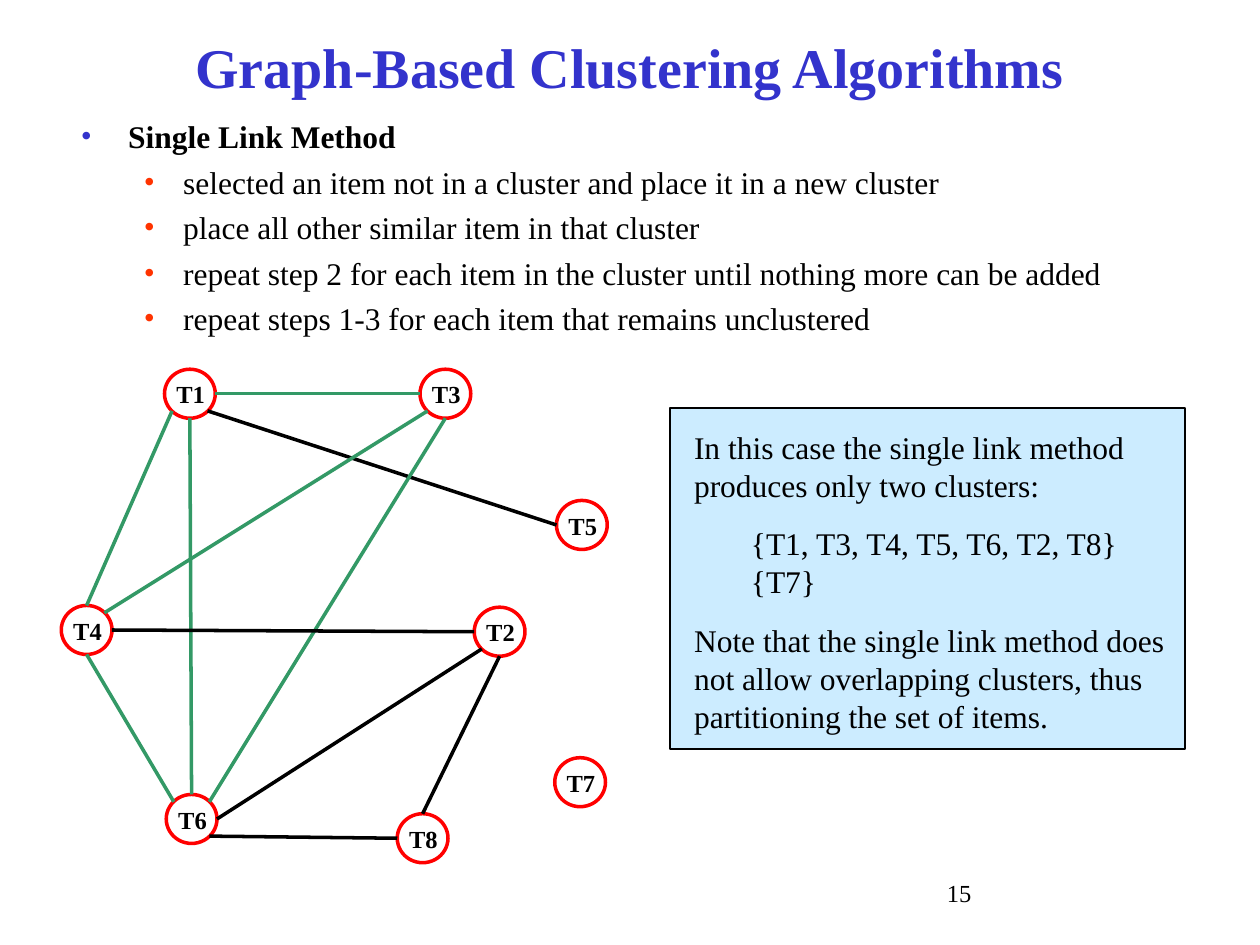
from lxml import etree
from pptx import Presentation
from pptx.dml.color import RGBColor
from pptx.enum import shapes, text
from pptx.oxml import ns
from pptx.util import Pt

COLORS = {
    "title": "3333CC", "text": "000000", "sub_bullet": "FF3300",
    "callout": "CCECFF", "node": "FF0000", "similar": "339966", "link": "000000",
}
FONT = "Times New Roman"

STEPS = [
    "selected an item not in a cluster and place it in a new cluster",
    "place all other similar item in that cluster",
    "repeat step 2 for each item in the cluster until nothing more can be added",
    "repeat steps 1-3 for each item that remains unclustered",
]
# Paragraph text, left indent, space before
FINDINGS = [
    ("In this case the single link method produces only two clusters:", 0, 0),
    ("{T1, T3, T4, T5, T6, T2, T8}", 32.5, 12),
    ("{T7}", 32.5, 0),
    ("Note that the single link method does not allow overlapping clusters, "
     "thus partitioning the set of items.", 0, 12),
]

NODE_W, NODE_H = 29, 28
NODES = {
    "T1": (59, 0), "T8": (192, 254), "T3": (205, 0), "T2": (236, 136),
    "T6": (60, 243), "T7": (282, 222), "T4": (0, 135), "T5": (283, 75),
}
# Points on a node's rim, as fractions of its width and height
SITES = {
    "top": (0.5, 0), "bottom": (0.5, 1), "left": (0, 0.5), "right": (1, 0.5),
    "top left": (0.15, 0.15), "top right": (0.85, 0.15),
    "bottom left": (0.15, 0.85), "bottom right": (0.85, 0.85),
}
EDGES = [
    ("T1", "bottom left", "T4", "top", "similar"),
    ("T1", "right", "T3", "left", "similar"),
    ("T1", "bottom", "T6", "top", "similar"),
    ("T1", "bottom right", "T5", "left", "link"),
    ("T3", "bottom left", "T4", "top right", "similar"),
    ("T4", "bottom", "T6", "top left", "similar"),
    ("T3", "bottom", "T6", "top right", "similar"),
    ("T4", "right", "T2", "left", "link"),
    ("T2", "bottom", "T8", "top", "link"),
    ("T6", "bottom right", "T8", "left", "link"),
    ("T2", "bottom left", "T6", "right", "link"),
]


def color(name):
    return RGBColor.from_string(COLORS[name])


def style(paragraph, size, bold=False, ink="text"):
    for run in paragraph.runs:
        run.font.name = FONT
        run.font.size = Pt(size)
        run.font.bold = bold
        run.font.color.rgb = color(ink)


def place(shape, left, top, width, height):
    shape.left, shape.top = Pt(left), Pt(top)
    shape.width, shape.height = Pt(width), Pt(height)


def set_bullet(paragraph, indent, hanging, ink):
    props = paragraph._p.get_or_add_pPr()
    props.set("marL", str(Pt(indent)))
    props.set("indent", str(-Pt(hanging)))
    bullet_color = etree.SubElement(props, ns.qn("a:buClr"))
    etree.SubElement(bullet_color, ns.qn("a:srgbClr"), val=COLORS[ink])
    etree.SubElement(props, ns.qn("a:buFont"), typeface=FONT)
    etree.SubElement(props, ns.qn("a:buChar"), char="•")


def add_label(slide, words, left, top, width, height, size, bold=False):
    label = slide.shapes.add_textbox(Pt(left), Pt(top), Pt(width), Pt(height))
    label.text_frame.text = words
    style(label.text_frame.paragraphs[0], size, bold)
    return label


def fill_title(slide, left, top, width, height):
    title = slide.shapes.title
    place(title, left, top, width, height)
    frame = title.text_frame
    frame.text = "Graph-Based Clustering Algorithms"
    frame.auto_size = text.MSO_AUTO_SIZE.NONE
    frame.vertical_anchor = text.MSO_ANCHOR.MIDDLE
    frame.paragraphs[0].alignment = text.PP_ALIGN.CENTER
    style(frame.paragraphs[0], 32, True, "title")


def fill_method(slide, left, top, width, height):
    method = slide.placeholders[1]
    place(method, left, top, width, height)
    frame = method.text_frame
    frame.text = "\n".join(["Single Link Method"] + STEPS)
    frame.auto_size = text.MSO_AUTO_SIZE.NONE
    for number, paragraph in enumerate(frame.paragraphs):
        heading = number == 0
        paragraph.level = 0 if heading else 1
        paragraph.space_before = Pt(4.4)
        style(paragraph, 18, heading)
        if heading:
            set_bullet(paragraph, 27, 27, "title")
        else:
            set_bullet(paragraph, 58.5, 22.5, "sub_bullet")


def add_callout(slide, left, top, width, height):
    panel = slide.shapes.add_shape(
        shapes.MSO_SHAPE.RECTANGLE, Pt(left), Pt(top), Pt(width), Pt(height))
    panel.shadow.inherit = False
    panel.fill.solid()
    panel.fill.fore_color.rgb = color("callout")
    panel.line.color.rgb = color("text")
    panel.line.width = Pt(1)

    findings = slide.shapes.add_textbox(
        Pt(left + 6.5), Pt(top + 8), Pt(width - 4), Pt(height - 12))
    frame = findings.text_frame
    frame.word_wrap = True
    frame.text = "\n".join(words for words, _, _ in FINDINGS)
    for paragraph, (_, indent, gap) in zip(frame.paragraphs, FINDINGS):
        paragraph.space_before = Pt(gap)
        paragraph._p.get_or_add_pPr().set("marL", str(Pt(indent)))
        style(paragraph, 18)


def add_graph(slide, left, top):
    def rim_point(node, site):
        (x, y), (across, down) = NODES[node], SITES[site]
        return Pt(left + x + across * NODE_W), Pt(top + y + down * NODE_H)

    for x, y in NODES.values():
        node = slide.shapes.add_shape(
            shapes.MSO_SHAPE.OVAL, Pt(left + x), Pt(top + y), Pt(NODE_W), Pt(NODE_H))
        node.shadow.inherit = False
        node.fill.background()
        node.line.color.rgb = color("node")
        node.line.width = Pt(2)

    for name, (x, y) in NODES.items():
        label = add_label(slide, name, left + x - 0.7, top + y + 2.2, 31, 24, 14, True)
        label.text_frame.word_wrap = False
        label.text_frame.paragraphs[0].alignment = text.PP_ALIGN.RIGHT

    for start, start_site, end, end_site, kind in EDGES:
        edge = slide.shapes.add_connector(
            shapes.MSO_CONNECTOR.STRAIGHT,
            *rim_point(start, start_site), *rim_point(end, end_site))
        edge.line.color.rgb = color(kind)
        edge.line.width = Pt(2)
        etree.SubElement(edge._element.spPr, ns.qn("a:effectLst"))


def main():
    deck = Presentation()
    deck.slide_width, deck.slide_height = Pt(720), Pt(540)
    slide = deck.slides.add_slide(deck.slide_layouts[1])
    add_label(slide, "15", 534, 498, 150, 18, 14)
    add_callout(slide, 383, 233, 294, 195)
    fill_title(slide, 54, 18, 612, 40)
    fill_method(slide, 39, 63.5, 627, 135)
    add_graph(slide, 35, 211)
    deck.save("out.pptx")


if __name__ == "__main__":
    main()
